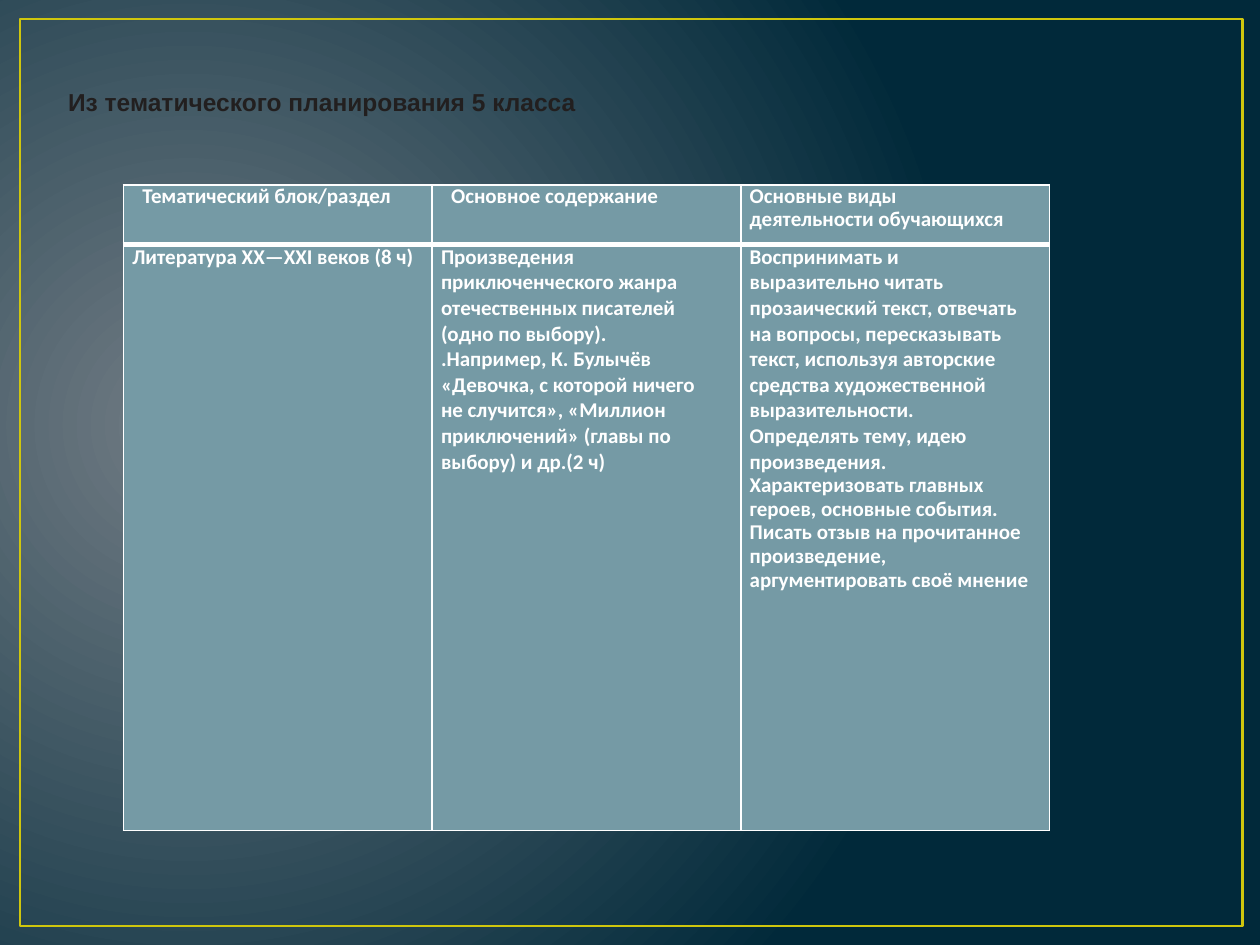
from lxml import etree
from pptx import Presentation
from pptx.dml.color import RGBColor
from pptx.enum.shapes import MSO_SHAPE
from pptx.enum.text import MSO_ANCHOR
from pptx.oxml.ns import qn
from pptx.util import Inches, Pt

RECTANGLE = MSO_SHAPE.RECTANGLE
TOP = MSO_ANCHOR.TOP
WHITE = RGBColor(0xFF, 0xFF, 0xFF)
GOLD = RGBColor(0xCF, 0xC6, 0x0D)
TEAL = RGBColor(0x75, 0x9A, 0xA5)
GRAY = RGBColor(0x71, 0x7C, 0x84)
NAVY = RGBColor(0x01, 0x29, 0x3A)
INK = RGBColor(0x22, 0x1F, 0x1F)

# Right cell margin of each column, in inches
RIGHT_MARGINS = [0, 0.25, 0.15]
# Each cell is a list of (text, left indent in inches, line spacing in points)
HEADER = [
    [("Тематический блок/раздел", 0.15, 13.4)],
    [("Основное содержание", 0.15, 13.4)],
    [("Основные виды", 0.07, 13.4),
     ("деятельности обучающихся", 0.07, 13.2)],
]
BODY = [
    [("Литература XX—XXI веков (8 ч)", 0.07, None)],
    [("Произведения приключенческого жанра отечественных писателей "
      "(одно по выбору).", 0.07, None),
     (".Например, К. Булычёв", 0.07, None),
     ("«Девочка, с которой ничего не случится», «Миллион приключений» "
      "(главы по выбору) и др.(2 ч)", 0.07, None)],
    [("Воспринимать и выразительно читать прозаический текст, отвечать на "
      "вопросы, пересказывать текст, используя авторские", 0.07, None),
     ("средства художественной выразительности.", 0.07, None),
     ("Определять тему, идею произведения.", 0.07, None),
     ("Характеризовать главных героев, основные события. Писать отзыв на "
      "прочитанное произведение, аргументировать своё мнение", 0.07, 13.5)],
]


def write(p, text, *, size, font, color, bold=True, indent=0, spacing=None):
    r = p.add_run()
    r.text = text
    r.font.size = Pt(size)
    r.font.name = font
    r.font.bold = bold
    r.font.color.rgb = color
    if indent:
        p._p.get_or_add_pPr().set("marL", str(Inches(indent)))
    if spacing:
        p.line_spacing = Pt(spacing)


def set_borders(cell, **widths):
    """Draw white cell borders; widths are points keyed by L, R, T, B."""
    tc_pr = cell._tc.get_or_add_tcPr()
    for side, width in widths.items():
        ln = etree.SubElement(tc_pr, qn(f"a:ln{side}"), w=str(Pt(width)))
        fill = etree.SubElement(ln, qn("a:solidFill"))
        etree.SubElement(fill, qn("a:srgbClr"), val=str(WHITE))


class SlideBuilder:
    def __init__(self, prs):
        self.s = prs.slides.add_slide(prs.slide_layouts[6])

    def radial_background(self, inner, outer, **focus):
        """Fill with a circular gradient; focus is its rectangle in percent."""
        fill = self.s.background.fill
        fill.gradient()
        for stop, color in zip(fill.gradient_stops, (inner, outer)):
            stop.color.rgb = color
        grad = self.s._element.find(".//" + qn("a:gradFill"))
        grad.remove(grad.find(qn("a:lin")))
        circle = etree.Element(qn("a:path"))
        circle.set("path", "circle")
        rect = etree.SubElement(circle, qn("a:fillToRect"))
        for side, percent in focus.items():
            rect.set(side, str(percent * 1000))
        grad.find(qn("a:gsLst")).addnext(circle)

    def frame(self, x, y, w, h, color, width):
        sp = self.s.shapes.add_shape(
            RECTANGLE, Inches(x), Inches(y), Inches(w), Inches(h))
        sp.shadow.inherit = False
        sp.fill.background()
        sp.line.color.rgb = color
        sp.line.width = Pt(width)

    def title(self, text, x, y, w, h):
        sp = self.s.shapes.add_textbox(
            Inches(x), Inches(y), Inches(w), Inches(h))
        tf = sp.text_frame
        tf.word_wrap = True
        tf.vertical_anchor = TOP
        tf.margin_left = tf.margin_right = Inches(0.34)
        tf.margin_top = Inches(0.01)
        tf.margin_bottom = 0
        write(tf.paragraphs[0], text, size=14, font="Arial", color=INK)

    def table(self, rows, x, y, col_width, row_heights):
        cols = len(rows[0])
        table = self.s.shapes.add_table(
            len(rows), cols, Inches(x), Inches(y),
            Inches(col_width * cols), Inches(sum(row_heights))).table
        for column in table.columns:
            column.width = Inches(col_width)
        for i, row in enumerate(rows):
            table.rows[i].height = Inches(row_heights[i])
            for j, paragraphs in enumerate(row):
                self.cell(table.cell(i, j), paragraphs, RIGHT_MARGINS[j],
                          is_header=i == 0)

    def cell(self, cell, paragraphs, right, is_header):
        cell.margin_left = cell.margin_top = cell.margin_bottom = 0
        cell.margin_right = Inches(right)
        top, bottom = (1, 3) if is_header else (3, 1)
        set_borders(cell, L=1, R=1, T=top, B=bottom)
        cell.fill.solid()
        cell.fill.fore_color.rgb = TEAL
        tf = cell.text_frame
        for k, (text, indent, spacing) in enumerate(paragraphs):
            p = tf.add_paragraph() if k else tf.paragraphs[0]
            write(p, text, size=12, font="Calibri", color=WHITE,
                  indent=indent, spacing=spacing)


def main():
    prs = Presentation()
    prs.slide_width = Inches(10)
    prs.slide_height = Inches(7.5)
    slide = SlideBuilder(prs)
    slide.radial_background(GRAY, NAVY, l=15, t=50, r=85, b=60)
    slide.frame(0.16, 0.15, 9.7, 7.2, GOLD, 1.5)
    slide.table([HEADER, BODY], 0.98, 1.47, 2.45, [0.47, 4.65])
    slide.title("Из тематического планирования 5 класса", 0.2, 0.68, 9.8, 0.5)
    prs.save("out.pptx")


if __name__ == "__main__":
    main()
